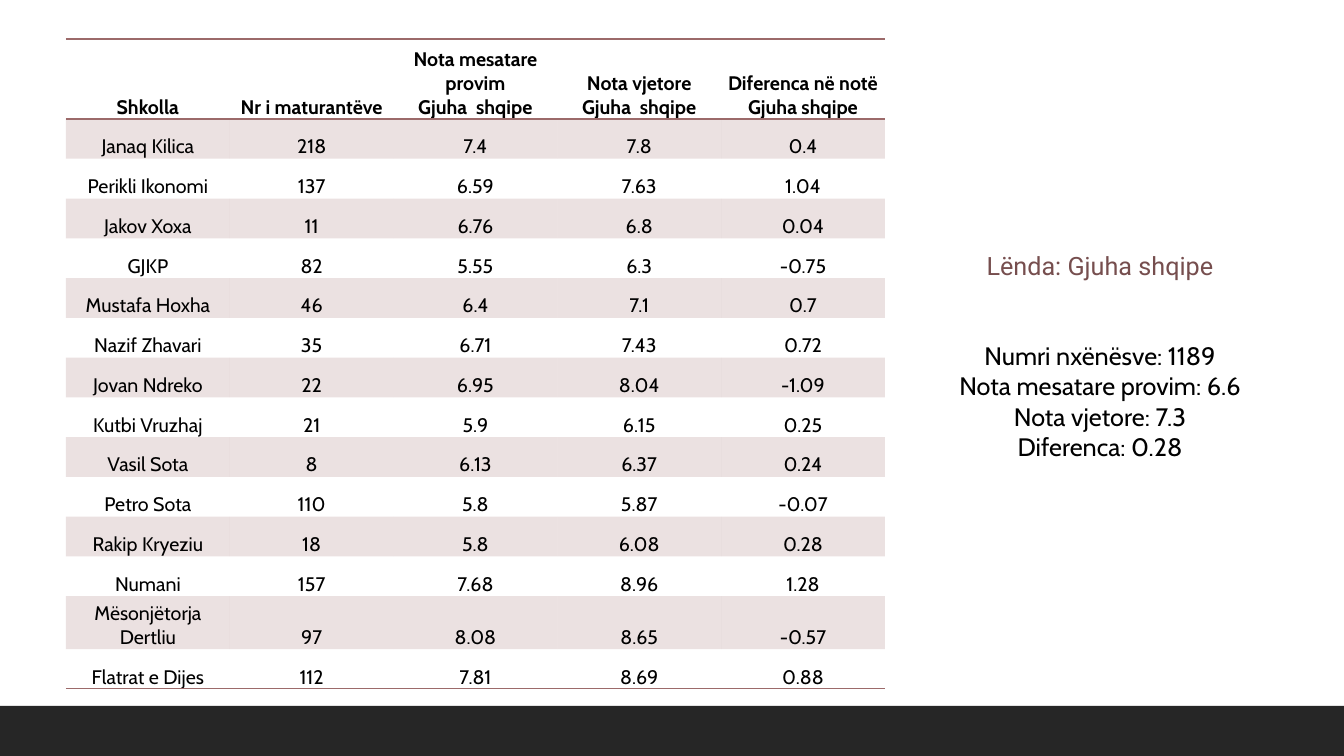
import pptx
import pptx.dml.color
import pptx.enum.shapes
import pptx.enum.text
import pptx.oxml
import pptx.oxml.ns
import pptx.util

PX = 12192000 / 1344
COLORS = {"band": "9C6A6A", "bar": "262626", "title": "764E4E", "text": "000000"}
NO_GRID = "{2D5ABB26-0587-4C30-8999-92F81FD0307C}"
CENTER = pptx.enum.text.PP_ALIGN.CENTER

HEADERS = [
    "Shkolla",
    "Nr i maturantëve",
    "Nota mesatare provim\nGjuha  shqipe",
    "Nota vjetore\nGjuha  shqipe",
    "Diferenca në notë\nGjuha shqipe",
]
SCHOOLS = [
    ("Janaq Kilica", "218", "7.4", "7.8", "0.4"),
    ("Perikli Ikonomi", "137", "6.59", "7.63", "1.04"),
    ("Jakov Xoxa", "11", "6.76", "6.8", "0.04"),
    ("GJKP", "82", "5.55", "6.3", "-0.75"),
    ("Mustafa Hoxha", "46", "6.4", "7.1", "0.7"),
    ("Nazif Zhavari", "35", "6.71", "7.43", "0.72"),
    ("Jovan Ndreko", "22", "6.95", "8.04", "-1.09"),
    ("Kutbi Vruzhaj", "21", "5.9", "6.15", "0.25"),
    ("Vasil Sota", "8", "6.13", "6.37", "0.24"),
    ("Petro Sota", "110", "5.8", "5.87", "-0.07"),
    ("Rakip Kryeziu", "18", "5.8", "6.08", "0.28"),
    ("Numani", "157", "7.68", "8.96", "1.28"),
    ("Mësonjëtorja Dertliu", "97", "8.08", "8.65", "-0.57"),
    ("Flatrat e Dijes", "112", "7.81", "8.69", "0.88"),
]
TALL_ROW = 13
SUMMARY = [
    "Numri nxënësve: 1189",
    "Nota mesatare provim: 6.6",
    "Nota vjetore: 7.3",
    "Diferenca: 0.28",
]


def px(n):
    return pptx.util.Emu(round(n * PX))


def rgb(name):
    return pptx.dml.color.RGBColor.from_string(COLORS[name])


def add_run(p, text, size, font, color, bold=False):
    r = p.add_run()
    r.text = text
    r.font.size = pptx.util.Pt(size)
    r.font.name = font
    r.font.bold = bold
    r.font.color.rgb = rgb(color)


def add_borders(cell, sides):
    tcPr = cell._tc.get_or_add_tcPr()
    for i, side in enumerate(sides):
        tcPr.insert(i, pptx.oxml.parse_xml(
            f'<a:ln{side} {pptx.oxml.ns.nsdecls("a")} w="12700"><a:solidFill>'
            f'<a:srgbClr val="{COLORS["band"]}"/></a:solidFill></a:ln{side}>'))


def fill_band(cell):
    cell.fill.solid()
    cell.fill.fore_color.rgb = rgb("band")
    for clr in cell._tc.tcPr.iter(pptx.oxml.ns.qn("a:srgbClr")):
        clr.append(pptx.oxml.parse_xml(
            f'<a:alpha {pptx.oxml.ns.nsdecls("a")} val="20000"/>'))


def fill_cell(cell, text, bold):
    cell.margin_left = cell.margin_right = cell.margin_top = px(1)
    cell.margin_bottom = 0
    cell.vertical_anchor = pptx.enum.text.MSO_ANCHOR.BOTTOM
    p = cell.text_frame.paragraphs[0]
    p.alignment = CENTER
    for i, line in enumerate(text.split("\n")):
        if i:
            p.add_line_break()
        add_run(p, line, 14, "Cabin", "text", bold)


def add_grades(s, x, y, w, h):
    rows = [HEADERS] + SCHOOLS
    frame = s.shapes.add_table(len(rows), len(HEADERS), px(x), px(y), px(w), px(h))
    table = frame.table
    table.horz_banding = False
    for style in frame.element.iter(pptx.oxml.ns.qn("a:tableStyleId")):
        style.text = NO_GRID
    for col in table.columns:
        col.width = px(w / len(HEADERS))
    heights = {0: 80, TALL_ROW: 53}
    plain = (h - sum(heights.values())) / (len(rows) - len(heights))
    for i, row in enumerate(rows):
        table.rows[i].height = px(heights.get(i, plain))
        for j, text in enumerate(row):
            cell = table.cell(i, j)
            fill_cell(cell, text, bold=i == 0)
            if i % 2:
                fill_band(cell)
            else:
                cell.fill.background()
            if i == 0:
                add_borders(cell, "TB")
            elif i == len(rows) - 1:
                add_borders(cell, "B")


def add_summary(s, x, y, w, h):
    tf = s.shapes.add_textbox(px(x), px(y), px(w), px(h)).text_frame
    tf.word_wrap = True
    p = tf.paragraphs[0]
    p.alignment = CENTER
    add_run(p, "Lënda: Gjuha shqipe", 18, "Roboto", "title")
    for i, line in enumerate(SUMMARY):
        p = tf.add_paragraph()
        p.alignment = CENTER
        if i == 0:
            p.space_before = pptx.util.Pt(43)
        add_run(p, line, 18, "Cabin", "text")


def add_bar(s, x, y, w, h):
    sp = s.shapes.add_shape(pptx.enum.shapes.MSO_SHAPE.RECTANGLE,
                            px(x), px(y), px(w), px(h))
    sp.shadow.inherit = False
    sp.fill.solid()
    sp.fill.fore_color.rgb = rgb("bar")
    sp.line.fill.background()


def main():
    prs = pptx.Presentation()
    prs.slide_width, prs.slide_height = px(1344), px(756)
    s = prs.slides.add_slide(prs.slide_layouts[6])
    add_bar(s, 0, 706, 1344, 50)
    add_grades(s, 66, 39, 819, 650)
    add_summary(s, 922, 245, 356, 285)
    prs.save("out.pptx")


if __name__ == "__main__":
    main()
